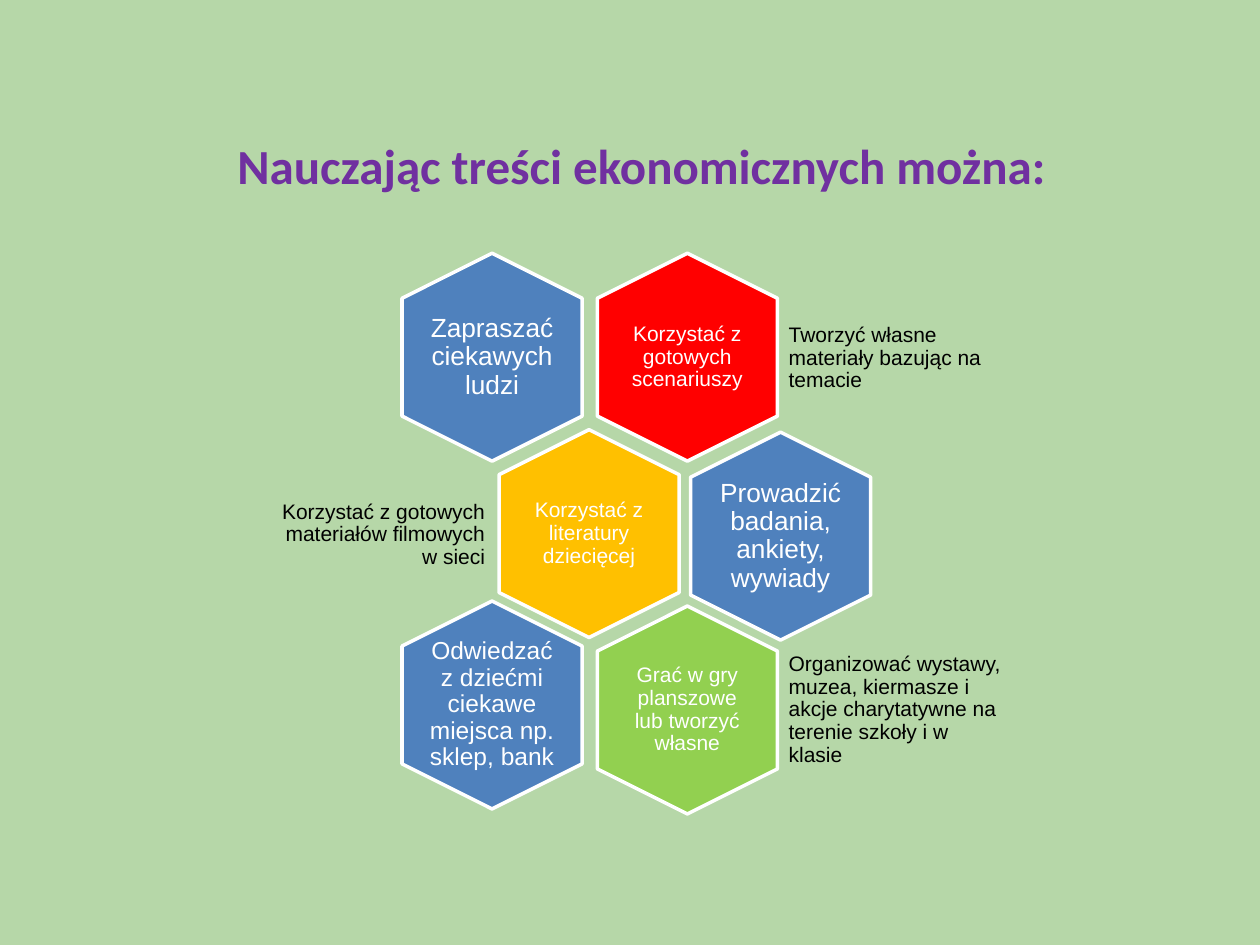
"""Builds a slide of six hexagons with ideas for teaching economics."""
from typing import NamedTuple

from pptx import Presentation
from pptx import util as u
from pptx.dml.color import RGBColor
from pptx.enum import shapes, text

PX = 9144
HEX_W, HEX_H = 165, 143
LABEL_DX, LABEL_DY, LABEL_W, LABEL_H = 33, 15, 99, 113
NOTE_H = 99
CENTER, LEFT, RIGHT = text.PP_ALIGN.CENTER, text.PP_ALIGN.LEFT, text.PP_ALIGN.RIGHT


class Hexagon(NamedTuple):
    x: int
    y: int
    fill: str
    size: int
    label: str


class Note(NamedTuple):
    x: int
    y: int
    w: int
    align: text.PP_ALIGN
    label: str


HEXAGONS = [
    Hexagon(463, 212, "FF0000", 12, "Korzystać z gotowych scenariuszy"),
    Hexagon(308, 212, "4F81BD", 15, "Zapraszać ciekawych ludzi"),
    Hexagon(385, 352, "FFC000", 12, "Korzystać z literatury dziecięcej"),
    Hexagon(537, 354, "4F81BD", 15, "Prowadzić badania, ankiety, wywiady"),
    Hexagon(463, 492, "92D050", 12, "Grać w gry planszowe lub tworzyć własne"),
    Hexagon(308, 488, "4F81BD", 14, "Odwiedzać z dziećmi ciekawe miejsca np. sklep, bank"),
]
NOTES = [
    Note(621, 235, 184, LEFT, "Tworzyć własne materiały bazując na temacie"),
    Note(212, 375, 178, RIGHT, "Korzystać z gotowych materiałów filmowych w sieci"),
    Note(621, 514, 184, LEFT, "Organizować wystawy, muzea, kiermasze i akcje "
         "charytatywne na terenie szkoły i w klasie"),
]


def px(*values: int) -> list[u.Emu]:
    """Turn px lengths into EMU."""
    return [u.Emu(v * PX) for v in values]


def rgb(value: str) -> RGBColor:
    """Turn a hex string into a colour."""
    return RGBColor.from_string(value)


def set_font(p, name: str, size: int, color: str, bold: bool = False) -> None:
    """Format the font of a paragraph."""
    p.font.name, p.font.size, p.font.bold = name, u.Pt(size), bold
    p.font.color.rgb = rgb(color)


def add_text(slide, box: tuple[int, int, int, int], label: str, size: int,
             color: str, align: text.PP_ALIGN, inset: int) -> None:
    """Add a wrapped text box, centred vertically."""
    tf = slide.shapes.add_textbox(*px(*box)).text_frame
    tf.word_wrap = True
    tf.vertical_anchor = text.MSO_ANCHOR.MIDDLE
    tf.margin_left, tf.margin_top, tf.margin_right, tf.margin_bottom = px(*[inset] * 4)
    p = tf.paragraphs[0]
    p.text, p.alignment, p.line_spacing = label, align, 0.9
    set_font(p, "Arial", size, color)


def add_hexagon(slide, h: Hexagon) -> None:
    """Add an upright hexagon with its label."""
    sp = slide.shapes.add_shape(shapes.MSO_SHAPE.HEXAGON, *px(h.x, h.y, HEX_W, HEX_H))
    sp.rotation = 90
    sp.shadow.inherit = False
    sp.fill.solid()
    sp.fill.fore_color.rgb = rgb(h.fill)
    sp.line.color.rgb = rgb("FFFFFF")
    sp.line.width = u.Pt(2)
    box = (h.x + LABEL_DX, h.y + LABEL_DY, LABEL_W, LABEL_H)
    add_text(slide, box, h.label, h.size, "FFFFFF", CENTER, 5 if h.size == 12 else 0)


def add_title(slide, label: str) -> None:
    """Place and format the title."""
    sp = slide.shapes.title
    sp.left, sp.top, sp.width, sp.height = px(59, 60, 900, 142)
    tf = sp.text_frame
    tf.vertical_anchor = text.MSO_ANCHOR.MIDDLE
    p = tf.paragraphs[0]
    p.text, p.alignment = label, CENTER
    set_font(p, "Calibri", 28, "7030A0", bold=True)


def main() -> None:
    """Build and save the slide."""
    prs = Presentation()
    prs.slide_width, prs.slide_height = px(1000, 750)
    s = prs.slides.add_slide(prs.slide_layouts[5])
    s.background.fill.solid()
    s.background.fill.fore_color.rgb = rgb("B6D7A8")
    add_title(s, "Nauczając treści ekonomicznych można:")
    for h in HEXAGONS:
        add_hexagon(s, h)
    for n in NOTES:
        add_text(s, (n.x, n.y, n.w, NOTE_H), n.label, 12, "000000", n.align, 5)
    prs.save("out.pptx")


if __name__ == "__main__":
    main()
